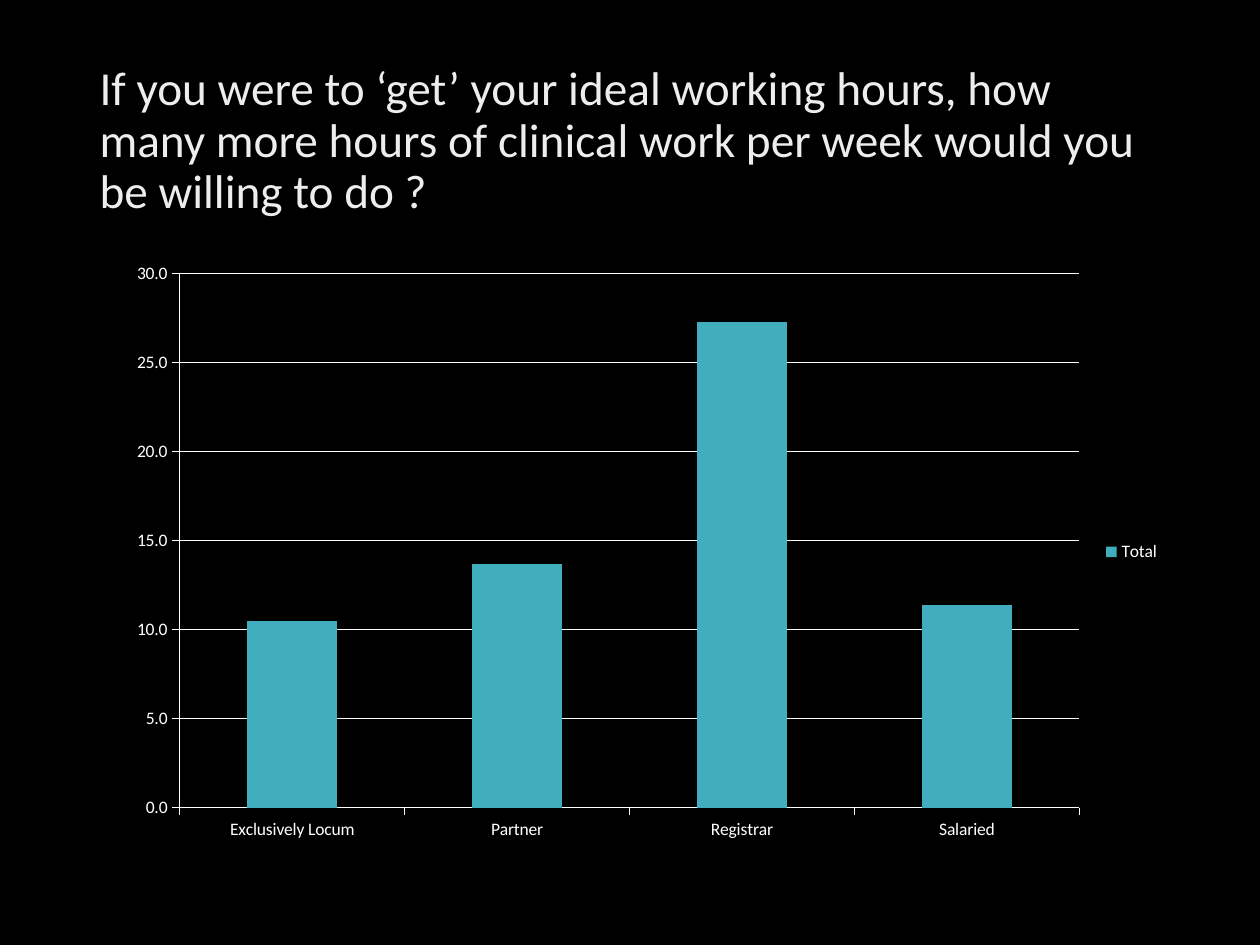
from dataclasses import dataclass

import pptx
import pptx.chart.data
import pptx.dml.color
import pptx.enum.chart
import pptx.enum.text
import pptx.oxml
import pptx.oxml.ns
import pptx.util
from lxml import etree


@dataclass(frozen=True)
class Theme:
    font: str = "Calibri"
    background: str = "000000"
    chart_text: str = "FFFFFF"
    bars: str = "41AEBD"
    title_stops: tuple = ((0, "BFBFBF"), (28, "EDEDED"), (100, "FFFFFF"))
    title_angle: int = 80
    title_size: int = 27
    chart_size: int = 10
    line_width: float = 0.75


THEME = Theme()
WIDTH, HEIGHT = 10, 7.5

# Boxes as shares of the slide: left, top, width, height
TITLE_BOX = (0.69 / WIDTH, 0.4 / HEIGHT, 8.62 / WIDTH, 1.45 / HEIGHT)
CHART_BOX = (0.92 / WIDTH, 2 / HEIGHT, 8.39 / WIDTH, 4.76 / HEIGHT)

QUESTION = ("If you were to ‘get’ your ideal working hours, how many more "
            "hours of clinical work per week would you be willing to do ?")
EXTRA_HOURS = {"Exclusively Locum": 10.5, "Partner": 13.7,
               "Registrar": 27.3, "Salaried": 11.4}


def rgb(value):
    return pptx.dml.color.RGBColor.from_string(value)


def to_lengths(box):
    return [pptx.util.Inches(round(share * side, 2))
            for share, side in zip(box, (WIDTH, HEIGHT) * 2)]


def apply_title_gradient(font):
    font.fill.gradient()
    gradient = font._element.find(pptx.oxml.ns.qn("a:gradFill"))
    stops = gradient.find(pptx.oxml.ns.qn("a:gsLst"))
    for stop in list(stops):
        stops.remove(stop)
    for position, color in THEME.title_stops:
        stop = etree.SubElement(stops, pptx.oxml.ns.qn("a:gs"), pos=str(position * 1000))
        etree.SubElement(stop, pptx.oxml.ns.qn("a:srgbClr"), val=color)
    direction = gradient.find(pptx.oxml.ns.qn("a:lin"))
    direction.set("ang", str(THEME.title_angle * 60000))


def place_title(slide, box):
    title = slide.shapes.title
    title.left, title.top, title.width, title.height = to_lengths(box)
    frame = title.text_frame
    frame.word_wrap = True
    frame.auto_size = pptx.enum.text.MSO_AUTO_SIZE.NONE
    frame.vertical_anchor = pptx.enum.text.MSO_ANCHOR.MIDDLE
    paragraph = frame.paragraphs[0]
    paragraph.alignment = pptx.enum.text.PP_ALIGN.LEFT
    paragraph.line_spacing = 0.9
    paragraph.space_before = pptx.util.Pt(0)
    question = paragraph.add_run()
    question.text = QUESTION
    question.font.name = THEME.font
    question.font.size = pptx.util.Pt(THEME.title_size)
    apply_title_gradient(question.font)


def format_line(line):
    line.color.rgb = rgb(THEME.chart_text)
    line.width = pptx.util.Pt(THEME.line_width)


def place_hours_chart(slide, box):
    hours = pptx.chart.data.CategoryChartData(number_format="0.0")
    hours.categories = list(EXTRA_HOURS)
    hours.add_series("Total", list(EXTRA_HOURS.values()))
    chart = slide.shapes.add_chart(
        pptx.enum.chart.XL_CHART_TYPE.COLUMN_CLUSTERED, *to_lengths(box), hours).chart
    chart.has_title = False
    chart.font.name = THEME.font
    chart.font.size = pptx.util.Pt(THEME.chart_size)
    chart.font.color.rgb = rgb(THEME.chart_text)

    # Bars
    plot = chart.plots[0]
    plot.gap_width = 150
    plot.vary_by_categories = False
    bars = plot.series[0].format.fill
    bars.solid()
    bars.fore_color.rgb = rgb(THEME.bars)

    # Axes and gridlines
    for axis in (chart.category_axis, chart.value_axis):
        axis.major_tick_mark = pptx.enum.chart.XL_TICK_MARK.OUTSIDE
        axis.minor_tick_mark = pptx.enum.chart.XL_TICK_MARK.NONE
        format_line(axis.format.line)
    hours_axis = chart.value_axis
    hours_axis.minimum_scale, hours_axis.maximum_scale = 0, 30
    hours_axis.major_unit = 5
    hours_axis.tick_labels.number_format = "0.0"
    hours_axis.tick_labels.number_format_is_linked = False
    hours_axis.has_major_gridlines = True
    format_line(hours_axis.major_gridlines.format.line)

    # Legend
    chart.has_legend = True
    chart.legend.position = pptx.enum.chart.XL_LEGEND_POSITION.RIGHT
    chart.legend.include_in_layout = False


def main():
    deck = pptx.Presentation()
    deck.slide_width = pptx.util.Inches(WIDTH)
    deck.slide_height = pptx.util.Inches(HEIGHT)
    slide = deck.slides.add_slide(deck.slide_layouts.get_by_name("Title Only"))
    background = slide.background.fill
    background.solid()
    background.fore_color.rgb = rgb(THEME.background)
    place_title(slide, TITLE_BOX)
    place_hours_chart(slide, CHART_BOX)
    deck.save("out.pptx")


if __name__ == "__main__":
    main()
